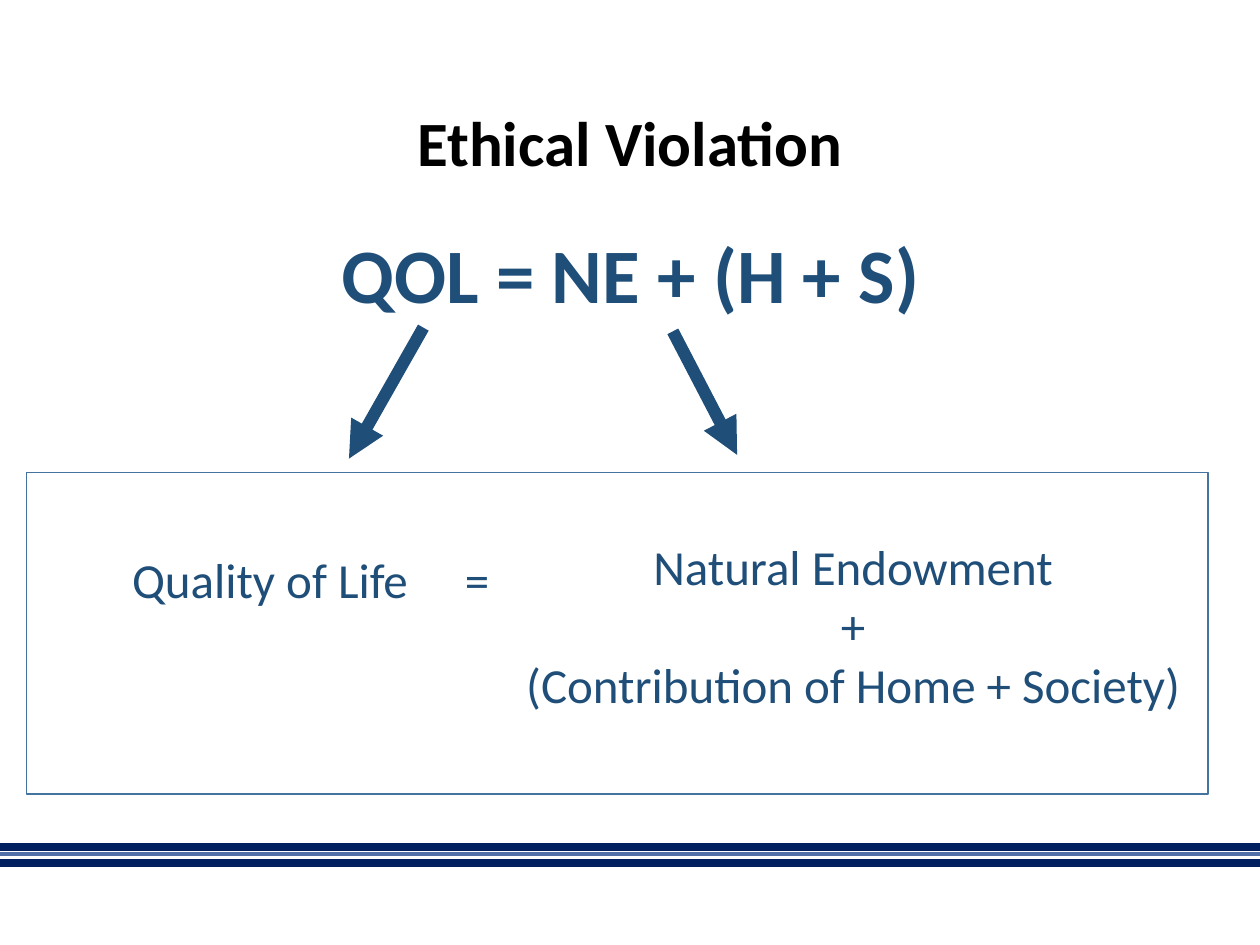
from lxml import etree
from pptx import Presentation, util as u
from pptx.dml.color import RGBColor
from pptx.enum import shapes, text
from pptx.oxml.ns import qn

WIDTH, HEIGHT = 10, 7.5
FONT = "Calibri"
BLUE, NAVY, STEEL, BORDER, BLACK = "1F4E79", "001F5F", "5070A7", "43739E", "000000"
CENTER, LEFT = text.PP_ALIGN.CENTER, text.PP_ALIGN.LEFT
TOP, MIDDLE = text.MSO_ANCHOR.TOP, text.MSO_ANCHOR.MIDDLE

FRAME = (0.21, 3.75, 9.38, 2.55)
EQUALS_TAB = 2.64
TEXTS = [
    ((0.69, 0.4, 8.62, 1.45), ["Ethical Violation"], 36, BLACK, True, CENTER, MIDDLE),
    ((0.21, 1.75, 9.59, 0.84), ["QOL = NE + (H + S)"], 44, BLUE, True, CENTER, TOP),
    ((0.95, 4.31, 3.21, 0.57), ["Quality of Life\t="], 28, BLUE, False, LEFT, TOP),
    ((3.96, 4.21, 5.62, 1.51),
     ["Natural Endowment", "+", "(Contribution of Home + Society)"],
     28, BLUE, False, CENTER, TOP),
]
STRIPES = [(6.72, NAVY, 4.5), (6.78, STEEL, 2.25), (6.85, NAVY, 4.5)]
ARROWS = [((3.36, 2.6), (2.77, 3.64)), ((5.34, 2.63), (5.85, 3.61))]


def color(value):
    return RGBColor.from_string(value)


def inches(values):
    return [u.Inches(value) for value in values]


def add_line(slide, start, end, line_color, width, arrow=False):
    connector = slide.shapes.add_connector(
        shapes.MSO_CONNECTOR.STRAIGHT, *inches(start + end))
    connector.line.color.rgb = color(line_color)
    connector.line.width = u.Pt(width)
    if arrow:
        etree.SubElement(connector.line._get_or_add_ln(), qn("a:tailEnd"), type="triangle")
    etree.SubElement(connector._element.spPr, qn("a:effectLst"))


def add_text(slide, box, lines, size, font_color, bold, alignment, anchor):
    frame = slide.shapes.add_textbox(*inches(box)).text_frame
    frame.word_wrap = True
    frame.vertical_anchor = anchor
    frame.text = "\n".join(lines)
    for paragraph in frame.paragraphs:
        paragraph.alignment = alignment
        if "\t" in paragraph.text:
            tabs = etree.SubElement(paragraph._p.get_or_add_pPr(), qn("a:tabLst"))
            etree.SubElement(tabs, qn("a:tab"), pos=str(u.Inches(EQUALS_TAB)), algn="l")
        font = paragraph.font
        font.name, font.size, font.bold = FONT, u.Pt(size), bold
        font.color.rgb = color(font_color)


def add_frame(slide):
    shape = slide.shapes.add_shape(shapes.MSO_SHAPE.RECTANGLE, *inches(FRAME))
    shape.shadow.inherit = False
    shape.fill.background()
    shape.line.color.rgb = color(BORDER)
    shape.line.width = u.Pt(1)


def main():
    presentation = Presentation()
    presentation.slide_width, presentation.slide_height = inches((WIDTH, HEIGHT))
    slide = presentation.slides.add_slide(presentation.slide_layouts[6])
    for y, stripe_color, width in STRIPES:
        add_line(slide, (0, y), (WIDTH, y), stripe_color, width)
    for item in TEXTS:
        add_text(slide, *item)
    for start, end in ARROWS:
        add_line(slide, start, end, BLUE, 7, arrow=True)
    add_frame(slide)
    presentation.save("out.pptx")


if __name__ == "__main__":
    main()
